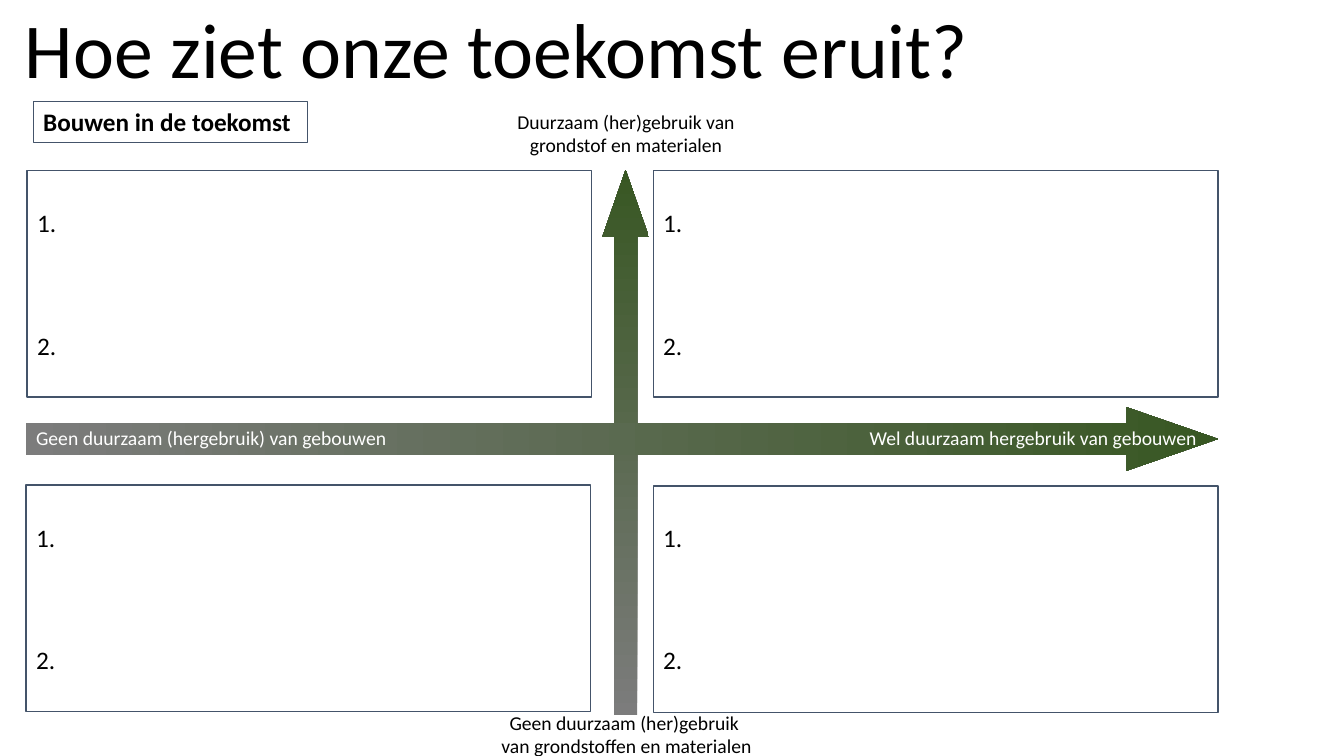
from dataclasses import dataclass

from pptx import Presentation, util as u
from pptx.dml import color
from pptx.enum import shapes, text

COLORS = {"ink": "000000", "white": "FFFFFF", "border": "44546A",
          "gray": "7C7C7C", "green": "385723"}
FONT = "Calibri"
NUMBERS = ("1.", "2.")
LEFT, CENTER, RIGHT = text.PP_ALIGN.LEFT, text.PP_ALIGN.CENTER, text.PP_ALIGN.RIGHT


@dataclass
class Frame:
    left: float
    top: float
    width: float
    height: float

    def lengths(self) -> list:
        return [u.Inches(v) for v in (self.left, self.top, self.width, self.height)]


@dataclass
class Style:
    size: float = 14
    color: str = "ink"
    bold: bool = False
    align: text.PP_ALIGN = LEFT
    gap: float = 0


@dataclass
class Label:
    frame: Frame
    lines: tuple
    style: Style


@dataclass
class Arrow:
    frame: Frame
    rotation: float = 0


def rgb(name: str) -> color.RGBColor:
    return color.RGBColor.from_string(COLORS[name])


def write(tf, lines: tuple, style: Style) -> None:
    tf.word_wrap = True
    for i, line in enumerate(lines):
        p = tf.paragraphs[0] if i == 0 else tf.add_paragraph()
        p.text = line
        p.alignment = style.align
        if i:
            p.space_before = u.Pt(style.gap)
        p.font.name = FONT
        p.font.size = u.Pt(style.size)
        p.font.bold = style.bold
        p.font.color.rgb = rgb(style.color)


def add_box(slide, frame: Frame, line_width: float, filled: bool):
    sp = slide.shapes.add_shape(shapes.MSO_SHAPE.RECTANGLE, *frame.lengths())
    sp.shadow.inherit = False
    if filled:
        sp.fill.solid()
        sp.fill.fore_color.rgb = rgb("white")
    else:
        sp.fill.background()
    sp.line.color.rgb = rgb("border")
    sp.line.width = u.Pt(line_width)
    return sp


def add_arrow(slide, arrow: Arrow) -> None:
    sp = slide.shapes.add_shape(shapes.MSO_SHAPE.RIGHT_ARROW, *arrow.frame.lengths())
    sp.shadow.inherit = False
    sp.rotation = arrow.rotation
    sp.adjustments[0] = 0.5
    sp.adjustments[1] = 1.44
    sp.fill.gradient()
    sp.fill.gradient_angle = 0
    for stop, name in zip(sp.fill.gradient_stops, ("gray", "green")):
        stop.color.rgb = rgb(name)
    sp.line.fill.background()


def add_label(slide, label: Label) -> None:
    tf = slide.shapes.add_textbox(*label.frame.lengths()).text_frame
    write(tf, label.lines, label.style)
    tf.auto_size = text.MSO_AUTO_SIZE.SHAPE_TO_FIT_TEXT


def add_title(slide, frame: Frame, line: str) -> None:
    title = slide.shapes.title
    title.left, title.top, title.width, title.height = frame.lengths()
    tf = title.text_frame
    write(tf, (line,), Style(size=55.5, align=CENTER))
    tf.auto_size = text.MSO_AUTO_SIZE.NONE
    tf.vertical_anchor = text.MSO_ANCHOR.BOTTOM
    tf.paragraphs[0].line_spacing = 0.7


NUMBERED = Style(size=18, gap=66)
CENTERED = Style(align=CENTER)
QUADRANTS = [
    (Frame(6.48, 4.82, 5.6, 2.25), ()),
    (Frame(0.26, 4.81, 5.6, 2.25), NUMBERS),
    (Frame(0.27, 1.69, 5.6, 2.25), NUMBERS),
    (Frame(6.48, 1.69, 5.6, 2.25), NUMBERS),
]
ARROWS = [Arrow(Frame(3.5, 4.16, 5.41, 0.46), 270), Arrow(Frame(0.26, 4.04, 11.82, 0.63))]
LABELS = [
    Label(Frame(4.86, 7, 2.71, 0.57),
          ("Geen duurzaam (her)gebruik ", "van grondstoffen en materialen"), CENTERED),
    Label(Frame(5.01, 1.04, 2.4, 0.57),
          ("Duurzaam (her)gebruik van grondstof en materialen",), CENTERED),
    Label(Frame(0.26, 4.18, 3.71, 0.34),
          ("Geen duurzaam (hergebruik) van gebouwen",), Style(color="white")),
    Label(Frame(8.28, 4.18, 3.69, 0.34),
          ("Wel duurzaam hergebruik van gebouwen",), Style(color="white", align=RIGHT)),
    Label(Frame(6.48, 5.13, 6.67, 1.62), NUMBERS, NUMBERED),
]


def main() -> None:
    prs = Presentation()
    prs.slide_width, prs.slide_height = u.Inches(13.33), u.Inches(7.5)
    slide = prs.slides.add_slide(prs.slide_layouts[5])
    add_title(slide, Frame(-0.82, 0.11, 11.5, 0.85), "Hoe ziet onze toekomst eruit?")
    for frame, lines in QUADRANTS:
        box = add_box(slide, frame, 1, filled=bool(lines))
        if lines:
            write(box.text_frame, lines, NUMBERED)
            box.text_frame.vertical_anchor = text.MSO_ANCHOR.MIDDLE
    topic = add_box(slide, Frame(0.33, 1.01, 2.72, 0.4), 0.75, filled=False)
    write(topic.text_frame, ("Bouwen in de toekomst",), Style(size=18, bold=True))
    topic.text_frame.vertical_anchor = text.MSO_ANCHOR.TOP
    topic.text_frame.auto_size = text.MSO_AUTO_SIZE.SHAPE_TO_FIT_TEXT
    for arrow in ARROWS:
        add_arrow(slide, arrow)
    for label in LABELS:
        add_label(slide, label)
    prs.save("out.pptx")


if __name__ == "__main__":
    main()
